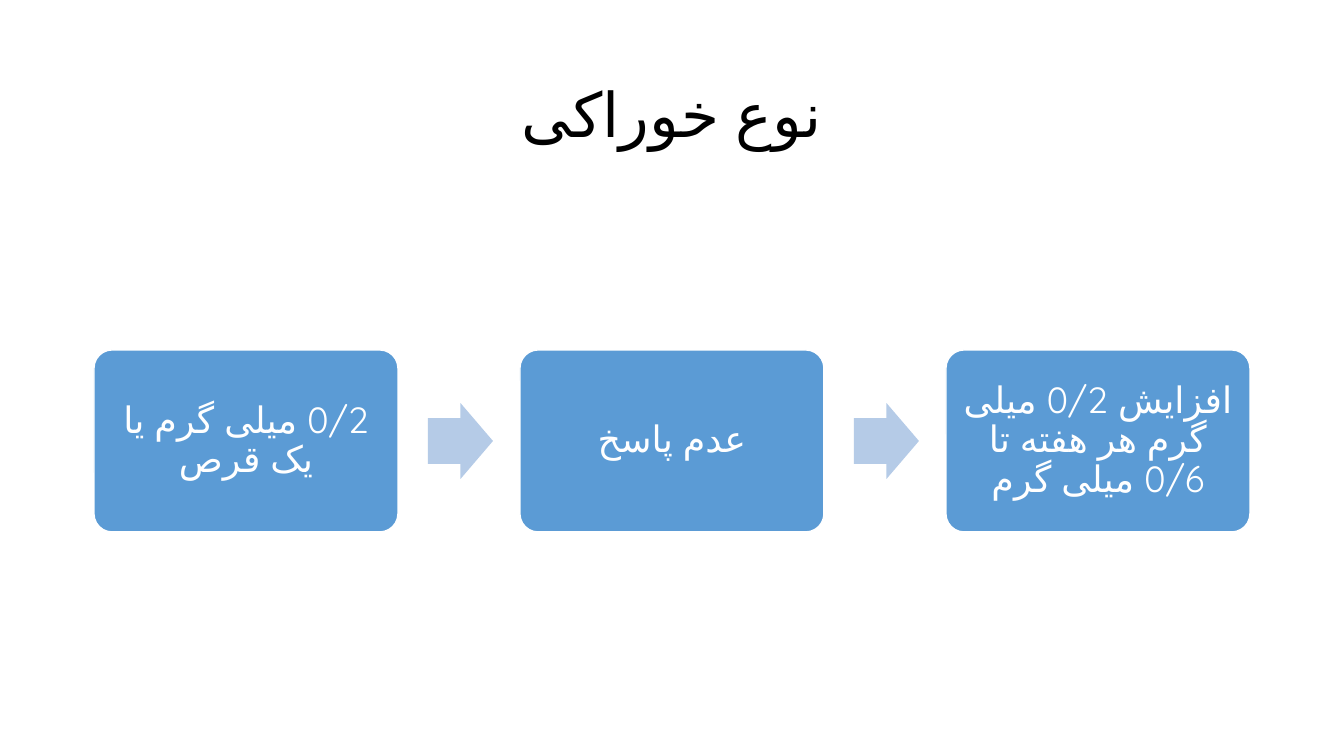
from dataclasses import dataclass

import lxml.etree
import pptx
import pptx.dml.color
import pptx.enum.shapes
import pptx.enum.text
import pptx.oxml.ns
import pptx.util
from pptx.dml.color import RGBColor

PAGE_WIDTH, PAGE_HEIGHT = 1344, 756
EMU_PER_PX = 12192000 / PAGE_WIDTH
FONT = "Quicksand"
LANGUAGE = "fa-IR"
BLACK = RGBColor(0x00, 0x00, 0x00)
WHITE = RGBColor(0xFF, 0xFF, 0xFF)
BLUE = RGBColor(0x5B, 0x9B, 0xD5)
PALE_BLUE = RGBColor(0xB5, 0xCB, 0xE7)

STEP_PITCH = 426
STEP_INSET = 11
STEPS = (
    "0/2 میلی گرم یا یک قرص",
    "عدم پاسخ",
    "افزایش 0/2 میلی گرم هر هفته تا 0/6 میلی گرم",
)


@dataclass(frozen=True)
class Area:
    left: int
    top: int
    width: int
    height: int

    def shifted(self, distance: int) -> "Area":
        return Area(self.left + distance, self.top, self.width, self.height)

    def emu(self) -> tuple:
        return tuple(px(n) for n in (self.left, self.top, self.width, self.height))


TITLE_AREA = Area(92, 40, 1160, 146)
FIRST_STEP = Area(94, 350, 304, 182)
FIRST_ARROW = Area(428, 403, 65, 76)


def px(length: int) -> pptx.util.Emu:
    return pptx.util.Emu(round(length * EMU_PER_PX))


def write_text(box, text: str, size: int, color: RGBColor):
    frame = box.text_frame
    frame.word_wrap = True
    frame.vertical_anchor = pptx.enum.text.MSO_ANCHOR.MIDDLE
    para = frame.paragraphs[0]
    span = para.add_run()
    span.text = text
    span._r.get_or_add_rPr().set("lang", LANGUAGE)
    para.alignment = pptx.enum.text.PP_ALIGN.CENTER
    properties = para._p.get_or_add_pPr()
    properties.set("rtl", "1")
    para.font.name = FONT
    para.font.size = pptx.util.Pt(size)
    para.font.color.rgb = color
    defaults = properties.find(pptx.oxml.ns.qn("a:defRPr"))
    lxml.etree.SubElement(defaults, pptx.oxml.ns.qn("a:cs")).set("typeface", FONT)
    return para


def add_title(page, text: str) -> None:
    box = page.shapes.add_textbox(*TITLE_AREA.emu())
    write_text(box, text, 44, BLACK)


def add_step(page, area: Area, text: str) -> None:
    box = page.shapes.add_shape(
        pptx.enum.shapes.MSO_SHAPE.ROUNDED_RECTANGLE, *area.emu())
    box.adjustments[0] = 0.1
    box.shadow.inherit = False
    box.fill.solid()
    box.fill.fore_color.rgb = BLUE
    box.line.color.rgb = WHITE
    box.line.width = pptx.util.Pt(1)
    frame = box.text_frame
    frame.margin_left = frame.margin_right = px(STEP_INSET)
    frame.margin_top = frame.margin_bottom = px(STEP_INSET)
    para = write_text(box, text, 26, WHITE)
    para.line_spacing = 0.9
    para.space_after = pptx.util.Pt(9)


def add_arrow(page, area: Area) -> None:
    arrow = page.shapes.add_shape(
        pptx.enum.shapes.MSO_SHAPE.RIGHT_ARROW, *area.emu())
    arrow.adjustments[0] = 0.6
    arrow.adjustments[1] = 0.5
    arrow.shadow.inherit = False
    arrow.fill.solid()
    arrow.fill.fore_color.rgb = PALE_BLUE
    arrow.line.fill.background()


def main() -> None:
    deck = pptx.Presentation()
    deck.slide_width = px(PAGE_WIDTH)
    deck.slide_height = px(PAGE_HEIGHT)
    page = deck.slides.add_slide(deck.slide_layouts[6])
    add_title(page, "نوع خوراکی")
    for index, text in enumerate(STEPS):
        if index:
            add_arrow(page, FIRST_ARROW.shifted((index - 1) * STEP_PITCH))
        add_step(page, FIRST_STEP.shifted(index * STEP_PITCH), text)
    deck.save("out.pptx")


if __name__ == "__main__":
    main()
